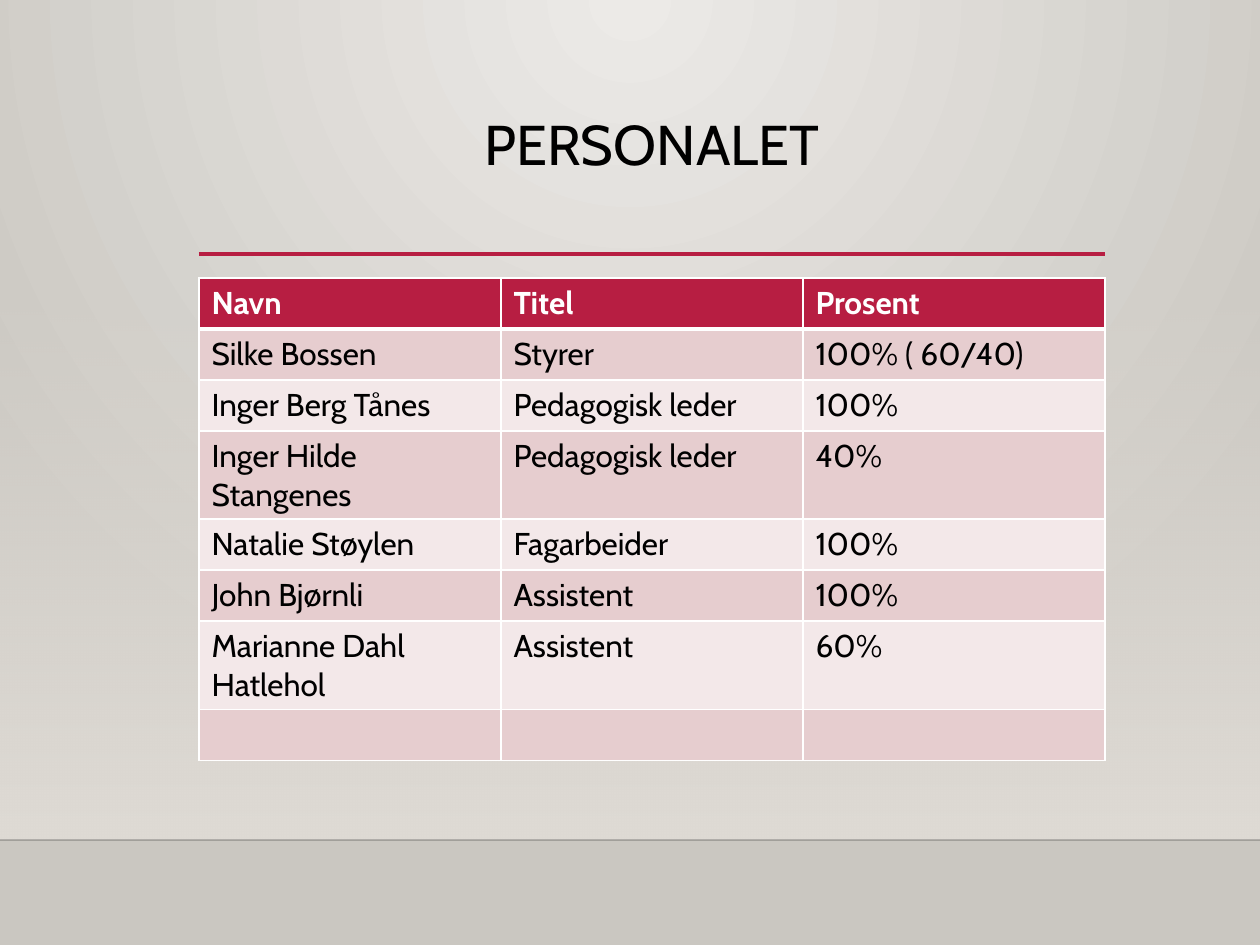
from lxml import etree
from pptx import Presentation, util as u
from pptx.dml.color import RGBColor
from pptx.enum import shapes, text
from pptx.oxml import parse_xml
from pptx.oxml.ns import nsdecls, qn

TITLE = "PERSONALET"
ROWS = [
    ("Navn", "Titel", "Prosent"),
    ("Silke Bossen", "Styrer", "100% ( 60/40)"),
    ("Inger Berg Tånes", "Pedagogisk leder", "100%"),
    ("Inger Hilde Stangenes", "Pedagogisk leder", "40%"),
    ("Natalie Støylen", "Fagarbeider", "100%"),
    ("John Bjørnli", "Assistent", "100%"),
    ("Marianne Dahl Hatlehol", "Assistent", "60%"),
    ("", "", ""),
]
FONT = "Cabin"
RED, WHITE, BLACK = "B71E42", "FFFFFF", "000000"
BANDS = ("F3E8E9", "E6CDCF")
WIDTH, HEIGHT = 1260, 945
LEFT, COLUMN, ROW = 199, 302, 51
CONTENT = COLUMN * len(ROWS[0])
TABLE_TOP, FLOOR = 278, 840


def px(length):
    return u.Emu(length * 914400 // 126)


def color(value):
    return RGBColor.from_string(value)


def set_gradient(fill, owner, stops, shade):
    """Give fill, found inside the element owner, (position, colour, opacity) stops."""
    fill.gradient()
    old = owner.find(".//" + qn("a:gradFill"))
    marks = "".join(
        f'<a:gs pos="{at * 1000}"><a:srgbClr val="{value}">'
        f'<a:alpha val="{opacity * 1000}"/></a:srgbClr></a:gs>'
        for at, value, opacity in stops)
    old.getparent().replace(old, parse_xml(
        f'<a:gradFill {nsdecls("a")} rotWithShape="1">'
        f"<a:gsLst>{marks}</a:gsLst>{shade}</a:gradFill>"))


def add_rule(slide, left, right, y, value, points, opacity=100):
    rule = slide.shapes.add_connector(
        shapes.MSO_CONNECTOR.STRAIGHT, px(left), px(y), px(right), px(y))
    rule.line.color.rgb = color(value)
    rule.line.width = u.Pt(points)
    tint = rule.element.find(".//" + qn("a:srgbClr"))
    etree.SubElement(tint, qn("a:alpha"), val=str(opacity * 1000))
    etree.SubElement(rule.element.spPr, qn("a:effectLst"))


def write(frame, words, *, size, value=BLACK, bold=False, align=None, spacing=None):
    para = frame.paragraphs[0]
    para.alignment = align
    para.line_spacing = spacing
    span = para.add_run()
    span.text = words
    span.font.name = FONT
    span.font.size = u.Pt(size)
    span.font.bold = bold
    span.font.color.rgb = color(value)


def set_borders(cell, bottom):
    properties = cell._tc.get_or_add_tcPr()
    for index, (side, points) in enumerate(
            (("L", 1), ("R", 1), ("T", 1), ("B", bottom))):
        properties.insert(index, parse_xml(
            f'<a:ln{side} {nsdecls("a")} w="{u.Pt(points)}"><a:solidFill>'
            f'<a:srgbClr val="{WHITE}"/></a:solidFill></a:ln{side}>'))


def add_staff_table(slide):
    table = slide.shapes.add_table(
        len(ROWS), len(ROWS[0]), px(LEFT), px(TABLE_TOP),
        px(CONTENT), px(ROW * len(ROWS))).table
    for column in table.columns:
        column.width = px(COLUMN)
    for r, row in enumerate(ROWS):
        header = r == 0
        table.rows[r].height = px(ROW)
        for c, words in enumerate(row):
            cell = table.cell(r, c)
            cell.fill.solid()
            cell.fill.fore_color.rgb = color(RED if header else BANDS[r % 2])
            set_borders(cell, bottom=3 if header else 1)
            if words:
                write(cell.text_frame, words, size=18, bold=header,
                      value=WHITE if header else BLACK)


def main():
    deck = Presentation()
    deck.slide_width, deck.slide_height = px(WIDTH), px(HEIGHT)
    slide = deck.slides.add_slide(deck.slide_layouts[6])
    set_gradient(
        slide.background.fill, slide.element,
        [(0, "ECEAE7", 100), (100, "CAC7C1", 100)],
        '<a:path path="circle">'
        '<a:fillToRect l="43000" t="0" r="43000" b="100000"/></a:path>')

    wall = slide.shapes.add_shape(
        shapes.MSO_SHAPE.RECTANGLE, 0, px(TABLE_TOP), px(WIDTH), px(FLOOR - TABLE_TOP))
    wall.shadow.inherit = False
    wall.line.fill.background()
    set_gradient(wall.fill, wall.element,
                 [(0, "DFDBD5", 0), (100, "DFDBD5", 100)],
                 '<a:lin ang="5400000" scaled="0"/>')

    add_rule(slide, 0, WIDTH, FLOOR, "000001", 1, opacity=20)
    add_rule(slide, LEFT, LEFT + CONTENT, 254, RED, 2.5)

    title = slide.shapes.add_textbox(px(LEFT), px(111), px(CONTENT), px(145)).text_frame
    title.word_wrap = True
    title.vertical_anchor = text.MSO_ANCHOR.TOP
    write(title, TITLE, size=32, align=text.PP_ALIGN.CENTER, spacing=0.9)

    add_staff_table(slide)
    deck.save("out.pptx")


if __name__ == "__main__":
    main()
